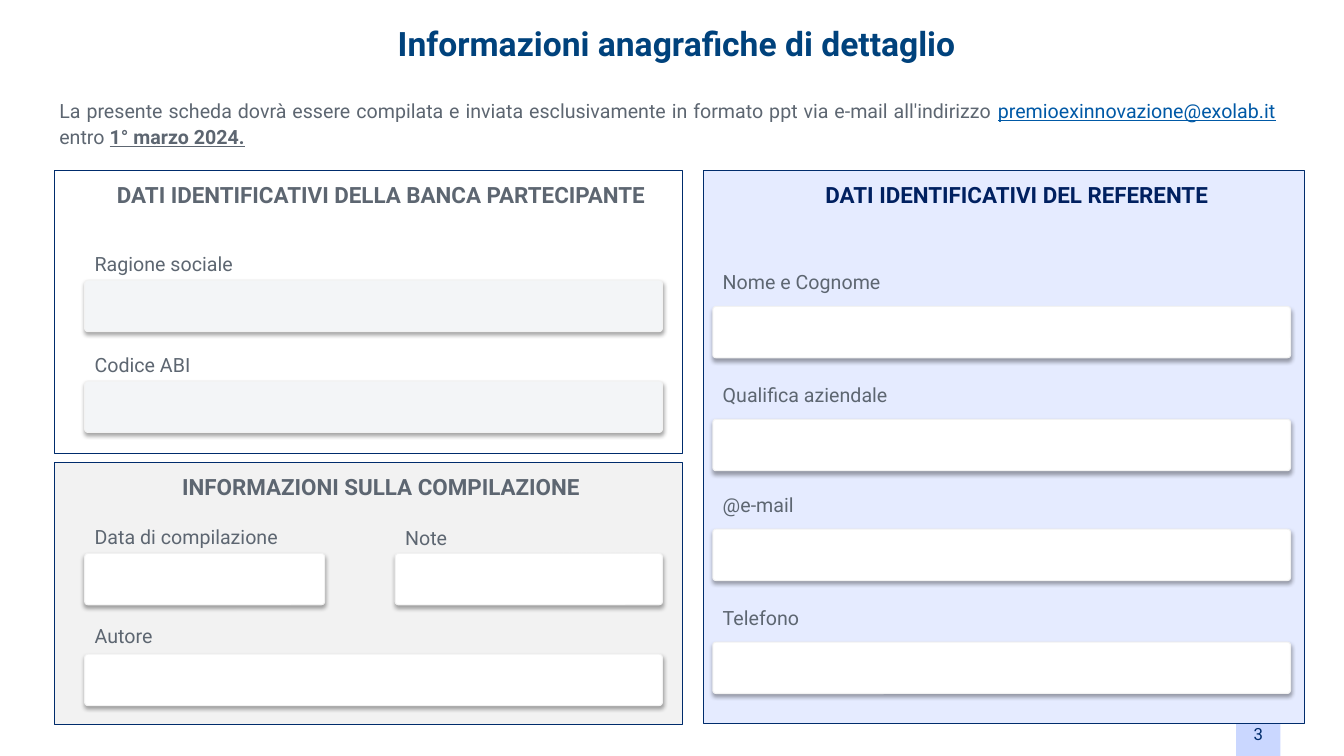
from lxml.etree import SubElement
from pptx import Presentation
from pptx.dml.color import RGBColor
from pptx.enum.shapes import MSO_SHAPE
from pptx.enum.text import MSO_ANCHOR, PP_ALIGN
from pptx.oxml.ns import qn
from pptx.util import Inches, Pt

COLORS = {
    "title": "00427C", "navy": "002C6C", "heading": "002060", "text": "5D6671",
    "link": "0059A6", "badge": "CAD7FF", "lilac": "E5EBFF", "white": "FFFFFF",
    "grey": "F2F2F2", "field": "F3F5F7", "black": "000000",
}


def rgb(name):
    return RGBColor.from_string(COLORS[name])


class FormSlide:
    """Holds the text style and the slide being filled."""
    font = "Roboto"
    field_height = 0.51

    def __init__(self, prs):
        self.slide = prs.slides.add_slide(prs.slide_layouts[5])

    def style(self, r, size, color, bold=False, underline=False):
        f = r.font
        f.name, f.size, f.bold, f.underline = self.font, Pt(size), bold, underline
        f.color.rgb = rgb(color)

    def set_text(self, sp, text, size, color, bold=False, align=PP_ALIGN.CENTER,
                 anchor=MSO_ANCHOR.TOP):
        tf = sp.text_frame
        tf.word_wrap = True
        tf.vertical_anchor = anchor
        p = tf.paragraphs[0]
        p.text = text
        p.alignment = align
        self.style(p.runs[0], size, color, bold)
        return p

    def box(self, x, y, w, h, fill, line=None, kind=MSO_SHAPE.RECTANGLE):
        sp = self.slide.shapes.add_shape(
            kind, Inches(x), Inches(y), Inches(w), Inches(h))
        sp.shadow.inherit = False
        sp.fill.solid()
        sp.fill.fore_color.rgb = rgb(fill)
        if line:
            sp.line.color.rgb = rgb(line)
            sp.line.width = Pt(0.75)
        else:
            sp.line.fill.background()
        return sp

    def textbox(self, x, y, w, h):
        return self.slide.shapes.add_textbox(
            Inches(x), Inches(y), Inches(w), Inches(h))

    def title(self, text, x, y, w, h):
        sp = self.slide.shapes.title
        sp.left, sp.top, sp.width, sp.height = map(Inches, (x, y, w, h))
        self.set_text(sp, text, 24, "title", True, anchor=MSO_ANCHOR.BOTTOM)

    def badge(self, text, x, y, side):
        sp = self.box(x, y, side, side, "badge")
        self.set_text(sp, text, 12, "navy", anchor=MSO_ANCHOR.MIDDLE)

    def intro(self, parts, x, y, w, h):
        tf = self.textbox(x, y, w, h).text_frame
        tf.word_wrap = True
        p = tf.paragraphs[0]
        p.alignment = PP_ALIGN.JUSTIFY
        p.line_spacing = 1.07
        for text, color, bold, underline in parts:
            r = p.add_run()
            r.text = text
            self.style(r, 14, color, bold, underline)

    def panel(self, heading, x, y, w, h, fill, color="text"):
        sp = self.box(x, y, w, h, fill, "navy")
        p = self.set_text(sp, heading, 16, color, True)
        p.line_spacing = 1.2
        pPr = p._p.get_or_add_pPr()
        pPr.set("marL", str(Inches(0.5)))
        pPr.set("indent", str(Inches(-0.25)))

    def field(self, label, x, label_y, y, w=5.73, fill="white"):
        sp = self.box(x, y, w, self.field_height, fill, "grey",
                      MSO_SHAPE.ROUNDED_RECTANGLE)
        sp.adjustments[0] = 0.062
        # Soft shadow straight below the field
        effects = sp._element.spPr.find(qn("a:effectLst"))
        shadow = SubElement(effects, qn("a:outerShdw"), blurRad=str(Pt(3.1)),
                            dist=str(Pt(1.8)), dir="5400000", algn="t",
                            rotWithShape="0")
        color = SubElement(shadow, qn("a:srgbClr"), val=COLORS["black"])
        SubElement(color, qn("a:alpha"), val="35000")
        self.set_text(self.textbox(x, label_y, 3.86, 0.34), label, 14, "text",
                      align=PP_ALIGN.LEFT)


def main():
    prs = Presentation()
    prs.slide_width, prs.slide_height = Inches(13.33), Inches(7.5)
    s = FormSlide(prs)

    # Title, page number and instructions
    s.title("Informazioni anagrafiche di dettaglio", 2.11, 0.27, 9.2, 0.41)
    s.badge("3", 12.26, 7.06, 0.44)
    s.intro([
        ("La presente scheda dovrà essere compilata e inviata esclusivamente "
         "in formato ppt via e-mail all'indirizzo ", "text", False, False),
        ("premioexinnovazione@exolab.it", "link", False, True),
        (" entro ", "text", False, False),
        ("1° marzo 2024.", "text", True, True),
    ], 0.49, 0.92, 12.26, 0.59)

    # Contact person
    s.panel("DATI IDENTIFICATIVI DEL REFERENTE", 6.98, 1.69, 5.96, 5.49,
            "lilac", "heading")
    for label, y in (("Nome e Cognome", 3.04), ("Qualifica aziendale", 4.16),
                     ("@e-mail", 5.25), ("Telefono", 6.37)):
        s.field(label, 7.07, y - 0.41, y)

    # Participating bank
    s.panel("DATI IDENTIFICATIVI DELLA BANCA PARTECIPANTE",
            0.54, 1.69, 6.23, 2.81, "white")
    for label, y in (("Ragione sociale", 2.78), ("Codice ABI", 3.78)):
        s.field(label, 0.84, y - 0.33, y, fill="field")

    # Form details
    s.panel("INFORMAZIONI SULLA COMPILAZIONE", 0.54, 4.59, 6.23, 2.6, "grey")
    s.field("Data di compilazione", 0.84, 5.16, 5.49, 2.38)
    s.field("Note", 3.92, 5.17, 5.49, 2.65)
    s.field("Autore", 0.84, 6.14, 6.49)

    prs.save("out.pptx")


if __name__ == "__main__":
    main()
